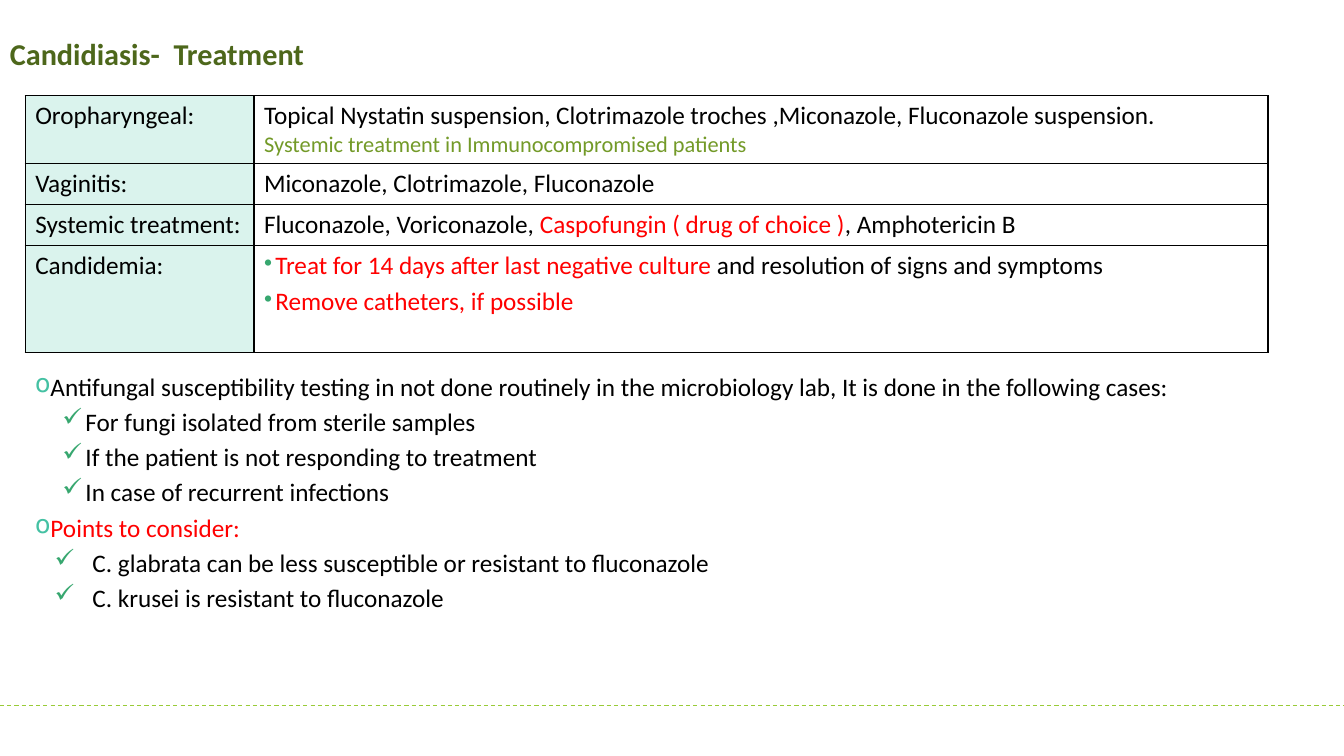
from lxml import etree
from pptx import Presentation
from pptx.dml.color import RGBColor
from pptx.enum.dml import MSO_LINE
from pptx.enum.shapes import MSO_CONNECTOR
from pptx.enum.text import MSO_ANCHOR
from pptx.oxml.ns import qn
from pptx.util import Pt

DASH = MSO_LINE.DASH
STRAIGHT = MSO_CONNECTOR.STRAIGHT
MIDDLE = MSO_ANCHOR.MIDDLE
TOP = MSO_ANCHOR.TOP

BLACK, RED, OLIVE = "000000", "FF0000", "739A28"
DARK, LIME, MINT = "4D671B", "99CB38", "DAF3ED"
GREEN, TEAL = "37A76F", "44C1A3"


def color(code):
    return RGBColor.from_string(code)


def text(words, **form):
    runs = [(words, BLACK)] if isinstance(words, str) else words
    return {"runs": runs, "size": 18, "bold": False, "left": 0, "hang": 0,
            "mark": None, "tint": GREEN, "scale": 100, "before": 0, "lines": None, **form}


def node(parent, tag, **attrs):
    return etree.SubElement(parent, qn(tag), attrs)


class Sheet:
    font = "Calibri"

    def __init__(self, slide):
        self.shapes = slide.shapes

    def fill(self, frame, items):
        for i, item in enumerate(items):
            para = frame.add_paragraph() if i else frame.paragraphs[0]
            if i:
                para.space_before = Pt(item["before"])
            if item["lines"]:
                para.line_spacing = item["lines"]
            if item["mark"]:
                self.mark(para, item)
            for words, tone in item["runs"]:
                run = para.add_run()
                run.text = words
                run.font.name = self.font
                run.font.size = Pt(item["size"])
                run.font.bold = item["bold"]
                run.font.color.rgb = color(tone)

    def mark(self, para, item):
        props = para._p.get_or_add_pPr()
        props.set("marL", str(Pt(item["left"])))
        props.set("indent", str(-Pt(item["hang"])))
        node(node(props, "a:buClr"), "a:srgbClr", val=item["tint"])
        node(props, "a:buSzPct", val=str(item["scale"] * 1000))
        node(props, "a:buChar", char=item["mark"])

    def box(self, x, y, w, h, items, anchor=TOP):
        frame = self.shapes.add_textbox(Pt(x), Pt(y), Pt(w), Pt(h)).text_frame
        frame.word_wrap = True
        frame.vertical_anchor = anchor
        self.fill(frame, items)

    def edge(self, cell):
        props = cell._tc.get_or_add_tcPr()
        for i, side in enumerate("LRTB"):
            line = etree.Element(qn(f"a:ln{side}"), w=str(Pt(1)))
            node(node(line, "a:solidFill"), "a:srgbClr", val=BLACK)
            props.insert(i, line)

    def table(self, x, y, widths, heights, rows):
        grid = self.shapes.add_table(len(heights), len(widths), Pt(x), Pt(y),
                                     Pt(sum(widths)), Pt(sum(heights))).table
        grid.first_row = False
        grid.horz_banding = False
        for col, width in zip(grid.columns, widths):
            col.width = Pt(width)
        for row, height, (label, items) in zip(grid.rows, heights, rows):
            row.height = Pt(height)
            head, body = row.cells
            head.fill.solid()
            head.fill.fore_color.rgb = color(MINT)
            body.fill.background()
            self.fill(head.text_frame, [text(label)])
            self.fill(body.text_frame, items)
            self.edge(head)
            self.edge(body)

    def line(self, x1, y1, x2, y2, tone):
        rule = self.shapes.add_connector(STRAIGHT, Pt(x1), Pt(y1), Pt(x2), Pt(y2))
        rule.line.color.rgb = color(tone)
        rule.line.width = Pt(0.75)
        rule.line.dash_style = DASH
        node(rule._element.spPr, "a:effectLst")


def main():
    deck = Presentation()
    deck.slide_width, deck.slide_height = Pt(960), Pt(540)
    sheet = Sheet(deck.slides.add_slide(deck.slide_layouts[6]))

    dot = {"mark": "•", "left": 8, "hang": 8, "scale": 95, "before": 3.6}
    ring = {"mark": "o", "tint": TEAL, "before": 3.6}
    tick = {"mark": "✓", "left": 36, "hang": 16.5, "before": 3.6}
    wide = {**tick, "left": 41, "hang": 27}

    sheet.line(0, 504, 960, 504, LIME)
    sheet.box(0, 25.2, 828, 28.8,
              [text([("Candidiasis-  Treatment", DARK)], size=21.6, bold=True, lines=0.9)],
              MIDDLE)
    sheet.table(18, 68.4, [163.5, 724.3], [48.5, 29.3, 29.3, 76.5], [
        ("Oropharyngeal:", [
            text("Topical Nystatin suspension, Clotrimazole troches ,Miconazole, "
                 "Fluconazole suspension."),
            text([("Systemic treatment in Immunocompromised patients", OLIVE)], size=16)]),
        ("Vaginitis:", [text("Miconazole, Clotrimazole, Fluconazole")]),
        ("Systemic treatment:", [
            text([("Fluconazole, Voriconazole, ", BLACK),
                  ("Caspofungin ( drug of choice )", RED),
                  (", Amphotericin B", BLACK)])]),
        ("Candidemia:", [
            text([("Treat for 14 days after last negative culture", RED),
                  (" and resolution of signs and symptoms", BLACK)], **dot),
            text([("Remove catheters, if possible", RED)], **dot)]),
    ])
    sheet.box(18, 261.4, 887.8, 185.8, [
        text("Antifungal susceptibility testing in not done routinely in the microbiology lab, "
             "It is done in the following cases:", **ring),
        text("For fungi isolated from sterile samples", **tick),
        text("If the patient is not responding to treatment", **tick),
        text("In case of recurrent infections", **tick),
        text([("Points to consider:", RED)], **ring),
        text("C. glabrata can be less susceptible or resistant to fluconazole", **wide),
        text("C. krusei is resistant to fluconazole", **wide),
    ])
    deck.save("out.pptx")


if __name__ == "__main__":
    main()
